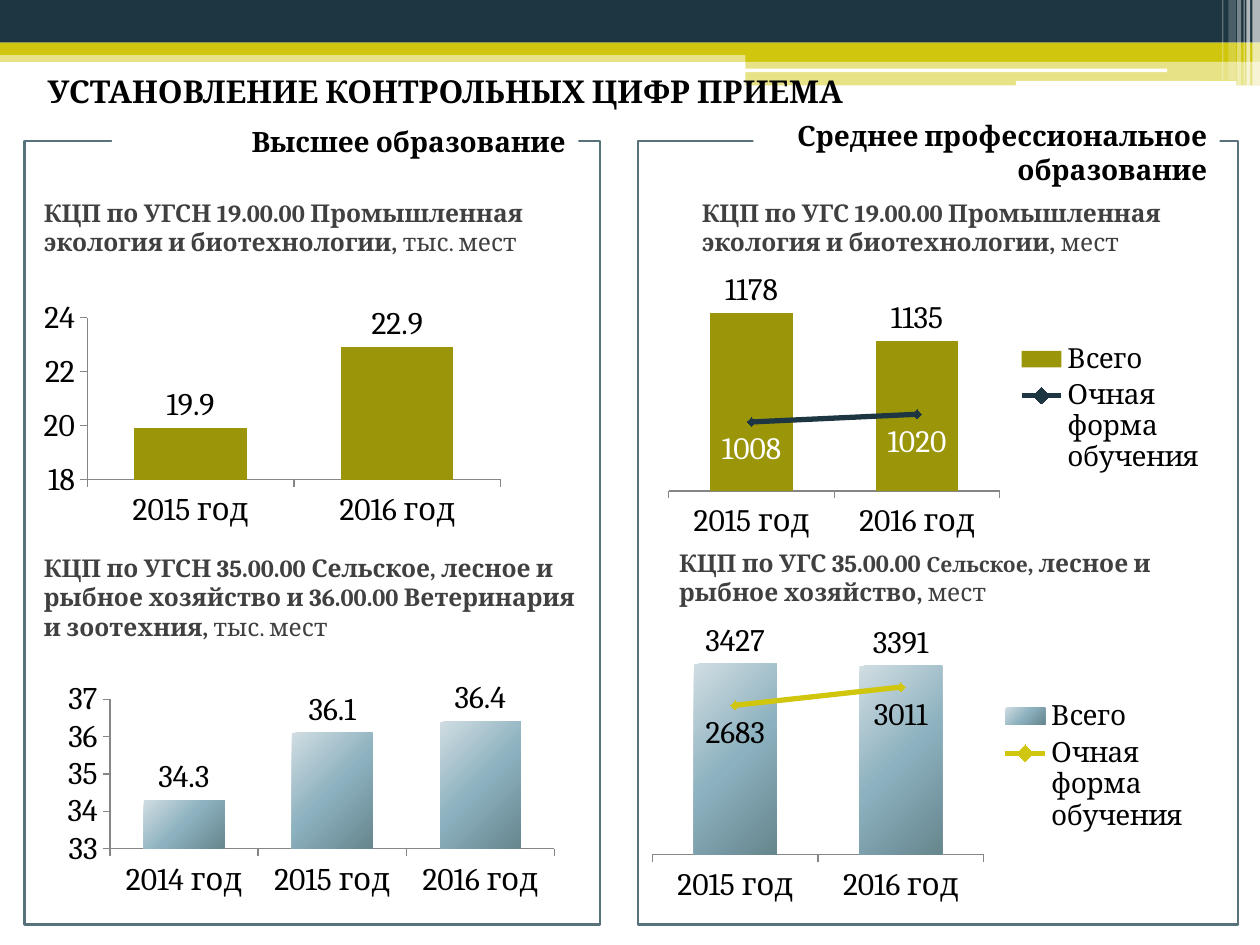
from copy import deepcopy

from lxml import etree
from pptx import Presentation
from pptx.chart.data import CategoryChartData
from pptx.dml.color import RGBColor
from pptx.enum.chart import XL_CHART_TYPE, XL_LABEL_POSITION, XL_LEGEND_POSITION, XL_MARKER_STYLE, XL_TICK_MARK
from pptx.enum.shapes import MSO_SHAPE
from pptx.enum.text import MSO_ANCHOR, MSO_AUTO_SIZE, PP_ALIGN
from pptx.oxml.ns import qn
from pptx.util import Pt

COLUMN = XL_CHART_TYPE.COLUMN_CLUSTERED
ABOVE, BELOW = XL_LABEL_POSITION.OUTSIDE_END, XL_LABEL_POSITION.BELOW
LEGEND_RIGHT = XL_LEGEND_POSITION.RIGHT
DIAMOND = XL_MARKER_STYLE.DIAMOND
TICK_OUT, TICK_NONE = XL_TICK_MARK.OUTSIDE, XL_TICK_MARK.NONE
RECTANGLE, ROUNDED = MSO_SHAPE.RECTANGLE, MSO_SHAPE.ROUNDED_RECTANGLE
TOP, MIDDLE = MSO_ANCHOR.TOP, MSO_ANCHOR.MIDDLE
GROW = MSO_AUTO_SIZE.SHAPE_TO_FIT_TEXT
LEFT, RIGHT = PP_ALIGN.LEFT, PP_ALIGN.RIGHT

FONT = "Cambria"
NAVY, YELLOW, OLIVE, WHITE, BLACK = "1D3641", "CFC60D", "9B950A", "FFFFFF", "000000"
GREY, FRAME, AXIS = "404040", "57727A", "868686"
STEEL_STOPS = [("D0DDE2", 0), ("8CB1BF", 0.5), ("67868E", 1)]


def rgb(color):
    return RGBColor.from_string(color)


def write_text(frame, runs, size=14, color=BLACK, align=LEFT, anchor=TOP):
    """Fill a text frame with (text, bold, own size or None) runs."""
    frame.word_wrap = True
    frame.auto_size = GROW
    frame.vertical_anchor = anchor
    paragraph = frame.paragraphs[0]
    paragraph.alignment = align
    for text, bold, own_size in runs:
        run = paragraph.add_run()
        run.text = text
        run.font.name = FONT
        run.font.size = Pt(own_size or size)
        run.font.bold = bold
        run.font.color.rgb = rgb(color)


presentation = Presentation()
presentation.slide_width, presentation.slide_height = Pt(720), Pt(540)
slide = presentation.slides.add_slide(presentation.slide_layouts[5])
shapes = slide.shapes

# Header bands and stripes: kind, left, top, width, height, colour, opacity in %
decorations = [
    (RECTANGLE, 0, 28.8, 720, 6.6, YELLOW, 50),
    (RECTANGLE, 0, 0, 720, 24.4, NAVY, 100),
    (RECTANGLE, 0, 24.4, 720, 7, YELLOW, 100),
    (RECTANGLE, 426, 28, 294, 7.2, YELLOW, 100),
    (RECTANGLE, 426, 34.8, 294, 14, YELLOW, 50),
    (ROUNDED, 425.8, 39.2, 241.2, 2, WHITE, 100),
    (ROUNDED, 580.5, 46.3, 126, 2.7, WHITE, 100),
    (RECTANGLE, 715.6, 0, 4.4, 48.8, WHITE, 65),
    (RECTANGLE, 712.2, 0, 2.2, 48.8, WHITE, 65),
    (RECTANGLE, 710.6, 0, 0.7, 48.8, WHITE, 60),
    (RECTANGLE, 707, 0, 2.2, 48.8, WHITE, 40),
    (RECTANGLE, 702, 0, 4.3, 46, WHITE, 20),
    (RECTANGLE, 698.4, 0, 0.7, 46, WHITE, 30),
]
for kind, left, top, width, height, color, opacity in decorations:
    band = shapes.add_shape(kind, Pt(left), Pt(top), Pt(width), Pt(height))
    band.shadow.inherit = False
    band.line.fill.background()
    band.fill.solid()
    band.fill.fore_color.rgb = rgb(color)
    if opacity < 100:
        color_element = band._element.spPr.find(".//" + qn("a:srgbClr"))
        etree.SubElement(color_element, qn("a:alpha"), val=str(opacity * 1000))

# Title, brought in front of the bands
title = shapes.title
title.left, title.top, title.width, title.height = Pt(20), Pt(37.5), Pt(663), Pt(29)
write_text(title.text_frame, [("УСТАНОВЛЕНИЕ КОНТРОЛЬНЫХ ЦИФР ПРИЕМА", True, None)], size=18)
shapes._spTree.append(title._element)

# Charts: place, plot area (shares of the chart), categories, series, value scale, column colour
# (None for the steel gradient), line colour, colour of the line's labels
YEARS = ["2015 год", "2016 год"]
TOTAL, FULL_TIME = "Всего", "Очная форма обучения"
charts = [
    ((20, 384, 306, 155.5), (0.14, 0.1, 0.83, 0.55), ["2014 год"] + YEARS,
     [("Series 1", [34.3, 36.1, 36.4])], (33, 37, 1), None, None, None),
    ((20, 168, 271.5, 136), (0.11, 0.1, 0.87, 0.68), YEARS,
     [("Series 1", [19.9, 22.9])], (18, 24, 2), OLIVE, None, None),
    ((366.5, 355.7, 320.5, 163.5), (0.02, 0.03, 0.59, 0.78), YEARS,
     [(TOTAL, [3427, 3391]), (FULL_TIME, [2683, 3011])], (0, 4000, 500), None, YELLOW, BLACK),
    ((375.8, 155.5, 320.5, 154), (0.02, 0.09, 0.59, 0.72), YEARS,
     [(TOTAL, [1178, 1135]), (FULL_TIME, [1008, 1020])], (900, 1200, 50), OLIVE, NAVY, WHITE),
]
for place, plot_area, categories, rows, scale, column_color, line_color, label_color in charts:
    chart_data = CategoryChartData()
    chart_data.categories = categories
    for name, values in rows:
        chart_data.add_series(name, values)
    chart = shapes.add_chart(COLUMN, *[Pt(length) for length in place], chart_data).chart
    chart.has_title = False
    chart.font.name, chart.font.size = FONT, Pt(18)
    chart.font.color.rgb = rgb(BLACK)
    combined = line_color is not None

    for axis in (chart.category_axis, chart.value_axis):
        axis.has_major_gridlines = False
        axis.major_tick_mark, axis.minor_tick_mark = TICK_OUT, TICK_NONE
        axis.format.line.color.rgb = rgb(AXIS)
        axis.format.line.width = Pt(0.75)
    value_axis = chart.value_axis
    value_axis.minimum_scale, value_axis.maximum_scale, value_axis.major_unit = scale
    value_axis.visible = not combined

    plot_element = chart._chartSpace.chart.plotArea
    for old_layout in plot_element.findall(qn("c:layout")):
        plot_element.remove(old_layout)
    layout = etree.Element(qn("c:layout"))
    manual = etree.SubElement(layout, qn("c:manualLayout"))
    settings = [("layoutTarget", "inner"), ("xMode", "edge"), ("yMode", "edge"), *zip("xywh", plot_area)]
    for tag, value in settings:
        etree.SubElement(manual, qn("c:" + tag), val=str(value))
    plot_element.insert(0, layout)

    columns = chart.plots[0]
    columns.vary_by_categories = False
    columns.gap_width = 100 if combined else 84
    labelled = [(columns.series[0], ABOVE, BLACK)]

    if combined:
        # Move the second series into a line plot on the same axes
        line_series_element = columns.series[1]._element
        for bar_only in line_series_element.findall(qn("c:invertIfNegative")):
            line_series_element.remove(bar_only)
        bar_element = line_series_element.getparent()
        line_element = bar_element.makeelement(qn("c:lineChart"))
        bar_element.addnext(line_element)
        etree.SubElement(line_element, qn("c:grouping"), val="standard")
        etree.SubElement(line_element, qn("c:varyColors"), val="0")
        line_element.append(line_series_element)
        etree.SubElement(line_element, qn("c:marker"), val="1")
        for axis_id in bar_element.findall(qn("c:axId")):
            line_element.append(deepcopy(axis_id))

        line = chart.plots[1].series[0]
        line.smooth = False
        line.format.line.color.rgb = rgb(line_color)
        line.format.line.width = Pt(3)
        line.marker.style, line.marker.size = DIAMOND, 5
        line.marker.format.fill.solid()
        line.marker.format.fill.fore_color.rgb = rgb(line_color)
        line.marker.format.line.color.rgb = rgb(line_color)
        labelled.append((line, BELOW, label_color))

    chart.has_legend = combined
    if combined:
        chart.legend.position = LEGEND_RIGHT
        chart.legend.include_in_layout = False
        chart.legend.font.size = Pt(16)

    column_series = columns.series[0]
    column_fill = column_series.format.fill
    if column_color:
        column_fill.solid()
        column_fill.fore_color.rgb = rgb(column_color)
    else:
        column_fill.gradient()
        column_fill.gradient_angle = 315
        stop_list = column_series._element.find(".//" + qn("a:gsLst"))
        stop_list.append(deepcopy(stop_list[-1]))
        for stop, (color, position) in zip(column_fill.gradient_stops, STEEL_STOPS):
            stop.color.rgb = rgb(color)
            stop.position = position

    for series, position, color in labelled:
        labels = series.data_labels
        labels.show_value = True
        labels.position = position
        labels.font.name, labels.font.size = FONT, Pt(18)
        labels.font.color.rgb = rgb(color)

# Chart captions
captions = [
    ((18, 312.5, 325, 58), [("КЦП по УГСН 35.00.00 Сельское, лесное и рыбное хозяйство и 36.00.00 "
                             "Ветеринария и зоотехния, ", True, None), ("тыс. мест", False, None)]),
    ((18, 109.5, 317.5, 41), [("КЦП по УГСН 19.00.00 Промышленная экология и биотехнологии, ", True, None),
                              ("тыс. мест", False, None)]),
    ((381, 309.5, 291.5, 41), [("КЦП по УГС 35.00.00 ", True, None), ("Сельское", True, 12),
                               (", лесное и рыбное хозяйство, ", True, None), ("мест", False, None)]),
    ((394, 109.5, 303, 41), [("КЦП по УГС 19.00.00 Промышленная экология и биотехнологии, ", True, None),
                             ("мест", False, None)]),
]
for place, runs in captions:
    caption = shapes.add_textbox(*[Pt(length) for length in place])
    write_text(caption.text_frame, runs, color=GREY)

# Panel frames, each with a heading that interrupts its top edge
panels = [
    ((364.5, 80.5, 343, 448), (430.5, 64, 266.5, 46), "Среднее профессиональное образование"),
    ((14, 80.5, 329, 448), (64, 67.7, 266.5, 26.6), "Высшее образование"),
]
for frame_place, heading_place, text in panels:
    frame = shapes.add_shape(RECTANGLE, *[Pt(length) for length in frame_place])
    frame.shadow.inherit = False
    frame.fill.background()
    frame.line.color.rgb = rgb(FRAME)
    frame.line.width = Pt(1.5)
    heading = shapes.add_shape(RECTANGLE, *[Pt(length) for length in heading_place])
    heading.shadow.inherit = False
    heading.fill.solid()
    heading.fill.fore_color.rgb = rgb(WHITE)
    heading.line.fill.background()
    write_text(heading.text_frame, [(text, True, None)], size=16, align=RIGHT, anchor=MIDDLE)

presentation.save("out.pptx")
